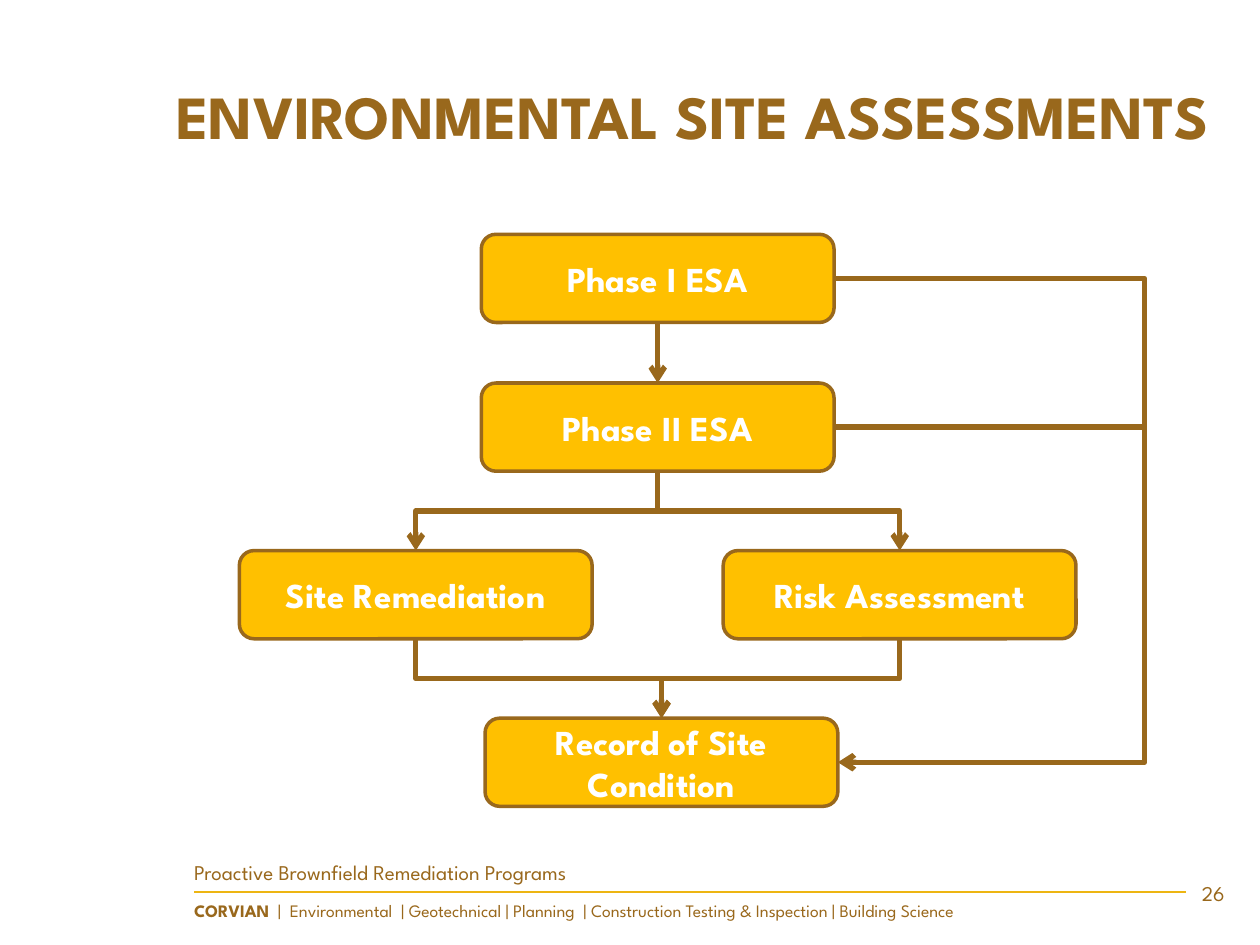
from dataclasses import dataclass
from typing import Optional

from lxml.etree import SubElement
from pptx import Presentation
from pptx.dml.color import RGBColor
from pptx.enum.shapes import MSO_CONNECTOR, MSO_SHAPE
from pptx.enum.text import MSO_ANCHOR, PP_ALIGN
from pptx.oxml.ns import qn
from pptx.shapes.autoshape import Shape
from pptx.shapes.connector import Connector
from pptx.slide import Slide
from pptx.util import Emu, Pt

PX = 9144
FONT = "League Spartan"
BROWN = RGBColor(0x99, 0x68, 0x1C)
AMBER = RGBColor(0xFF, 0xC0, 0x00)
GOLD = RGBColor(0xED, 0xB5, 0x12)
WHITE = RGBColor(0xFF, 0xFF, 0xFF)
BOX_WIDTH, BOX_HEIGHT = 280, 70
BYPASS_X = 909
TOP, BOTTOM, RIGHT = 0, 2, 3


@dataclass
class Step:
    text: str
    left: int
    top: int


@dataclass
class Label:
    texts: tuple[str, ...]
    left: int
    top: int
    width: int
    height: int
    size: int
    anchor: MSO_ANCHOR = MSO_ANCHOR.TOP
    align: PP_ALIGN = PP_ALIGN.LEFT
    bold_first: bool = False
    inset: bool = False


STEPS = {
    "phase_one": Step("Phase I ESA", 382, 186),
    "phase_two": Step("Phase II ESA", 382, 304),
    "remediation": Step("Site Remediation", 190, 437),
    "risk": Step("Risk Assessment", 574, 437),
    "record": Step("Record of Site Condition", 385, 570),
}
BRANCHES = [
    ("phase_two", "risk"),
    ("phase_two", "remediation"),
    ("remediation", "record"),
    ("risk", "record"),
]
LABELS = [
    Label(("ENVIRONMENTAL SITE ASSESSMENTS",), 130, 29, 850, 125, 35,
          MSO_ANCHOR.MIDDLE, bold_first=True, inset=True),
    Label(("Proactive Brownfield Remediation Programs",), 154, 674, 787, 28, 12,
          MSO_ANCHOR.BOTTOM),
    Label(("CORVIAN", "  |  Environmental  | Geotechnical | Planning  | "
           "Construction Testing & Inspection | Building Science"),
          154, 714, 780, 23, 10, bold_first=True),
    Label(("26",), 941, 697, 31, 23, 12, MSO_ANCHOR.MIDDLE, PP_ALIGN.RIGHT),
]


def px(value: float) -> Emu:
    return Emu(round(value * PX))


def add_label(slide: Slide, label: Label) -> None:
    shape = slide.shapes.add_textbox(
        px(label.left), px(label.top), px(label.width), px(label.height))
    frame = shape.text_frame
    frame.word_wrap = True
    frame.vertical_anchor = label.anchor
    if not label.inset:
        frame.margin_left = frame.margin_right = 0
        frame.margin_top = frame.margin_bottom = 0
    paragraph = frame.paragraphs[0]
    paragraph.alignment = label.align
    for index, text in enumerate(label.texts):
        run = paragraph.add_run()
        run.text = text
        run.font.name = FONT
        run.font.size = Pt(label.size)
        run.font.bold = label.bold_first and index == 0
        run.font.color.rgb = BROWN


def add_step(slide: Slide, step: Step) -> Shape:
    shape = slide.shapes.add_shape(
        MSO_SHAPE.FLOWCHART_ALTERNATE_PROCESS,
        px(step.left), px(step.top), px(BOX_WIDTH), px(BOX_HEIGHT))
    shape.shadow.inherit = False
    shape.fill.solid()
    shape.fill.fore_color.rgb = AMBER
    shape.line.color.rgb = BROWN
    shape.line.width = Pt(2)
    frame = shape.text_frame
    frame.word_wrap = True
    frame.vertical_anchor = MSO_ANCHOR.MIDDLE
    frame.text = step.text
    paragraph = frame.paragraphs[0]
    paragraph.alignment = PP_ALIGN.CENTER
    font = paragraph.runs[0].font
    font.name = FONT
    font.size = Pt(20)
    font.bold = True
    font.color.rgb = WHITE
    return shape


def add_line(slide: Slide, kind: MSO_CONNECTOR, begin: tuple[int, int],
             end: tuple[int, int], color: RGBColor = BROWN, width: int = 3,
             arrow: bool = False) -> Connector:
    connector = slide.shapes.add_connector(
        kind, px(begin[0]), px(begin[1]), px(end[0]), px(end[1]))
    connector.line.color.rgb = color
    connector.line.width = Pt(width)
    if arrow:
        SubElement(connector.line._get_or_add_ln(), qn("a:tailEnd"), type="arrow")
    SubElement(connector._element.spPr, qn("a:effectLst"))
    return connector


def link(slide: Slide, kind: MSO_CONNECTOR, source: Shape, source_side: int,
         target: Optional[Shape] = None, target_side: int = TOP,
         end: tuple[int, int] = (0, 0)) -> Connector:
    connector = add_line(slide, kind, (0, 0), end, arrow=target is not None)
    connector.begin_connect(source, source_side)
    if target is not None:
        connector.end_connect(target, target_side)
    return connector


def add_branch(slide: Slide, source: Shape, target: Shape) -> None:
    connector = link(slide, MSO_CONNECTOR.ELBOW, source, BOTTOM, target, TOP)
    rightward = connector.end_x > connector.begin_x
    center_x = (connector.begin_x + connector.end_x) // 2
    center_y = (connector.begin_y + connector.end_y) // 2
    width, height = connector.height, connector.width
    connector.left, connector.top = Emu(center_x - width // 2), Emu(center_y - height // 2)
    connector.width, connector.height = width, height
    transform = connector._element.spPr.find(qn("a:xfrm"))
    transform.set("rot", str((270 if rightward else 90) * 60000))
    transform.set("flipH", "1" if rightward else "0")


def add_bypass(slide: Slide, source: Shape, target: Shape) -> None:
    connector = link(slide, MSO_CONNECTOR.ELBOW, source, RIGHT, target, RIGHT)
    ratio = (px(BYPASS_X) - connector.begin_x) / connector.width
    geometry = connector._element.spPr.find(qn("a:prstGeom"))
    adjustments = geometry.find(qn("a:avLst"))
    if adjustments is None:
        adjustments = SubElement(geometry, qn("a:avLst"))
    SubElement(adjustments, qn("a:gd"), name="adj1", fmla=f"val {round(ratio * 100000)}")


def main() -> None:
    presentation = Presentation()
    presentation.slide_width, presentation.slide_height = px(1000), px(750)
    slide = presentation.slides.add_slide(presentation.slide_layouts[6])
    add_line(slide, MSO_CONNECTOR.STRAIGHT, (941, 708), (154, 708), GOLD, 1)
    for label in LABELS:
        add_label(slide, label)
    boxes = {name: add_step(slide, step) for name, step in STEPS.items()}
    phase_one, phase_two = boxes["phase_one"], boxes["phase_two"]
    link(slide, MSO_CONNECTOR.STRAIGHT, phase_one, BOTTOM, phase_two, TOP)
    for source, target in BRANCHES:
        add_branch(slide, boxes[source], boxes[target])
    add_bypass(slide, phase_one, boxes["record"])
    middle = STEPS["phase_two"].top + BOX_HEIGHT // 2
    link(slide, MSO_CONNECTOR.STRAIGHT, phase_two, RIGHT, end=(BYPASS_X, middle))
    presentation.save("out.pptx")


if __name__ == "__main__":
    main()
